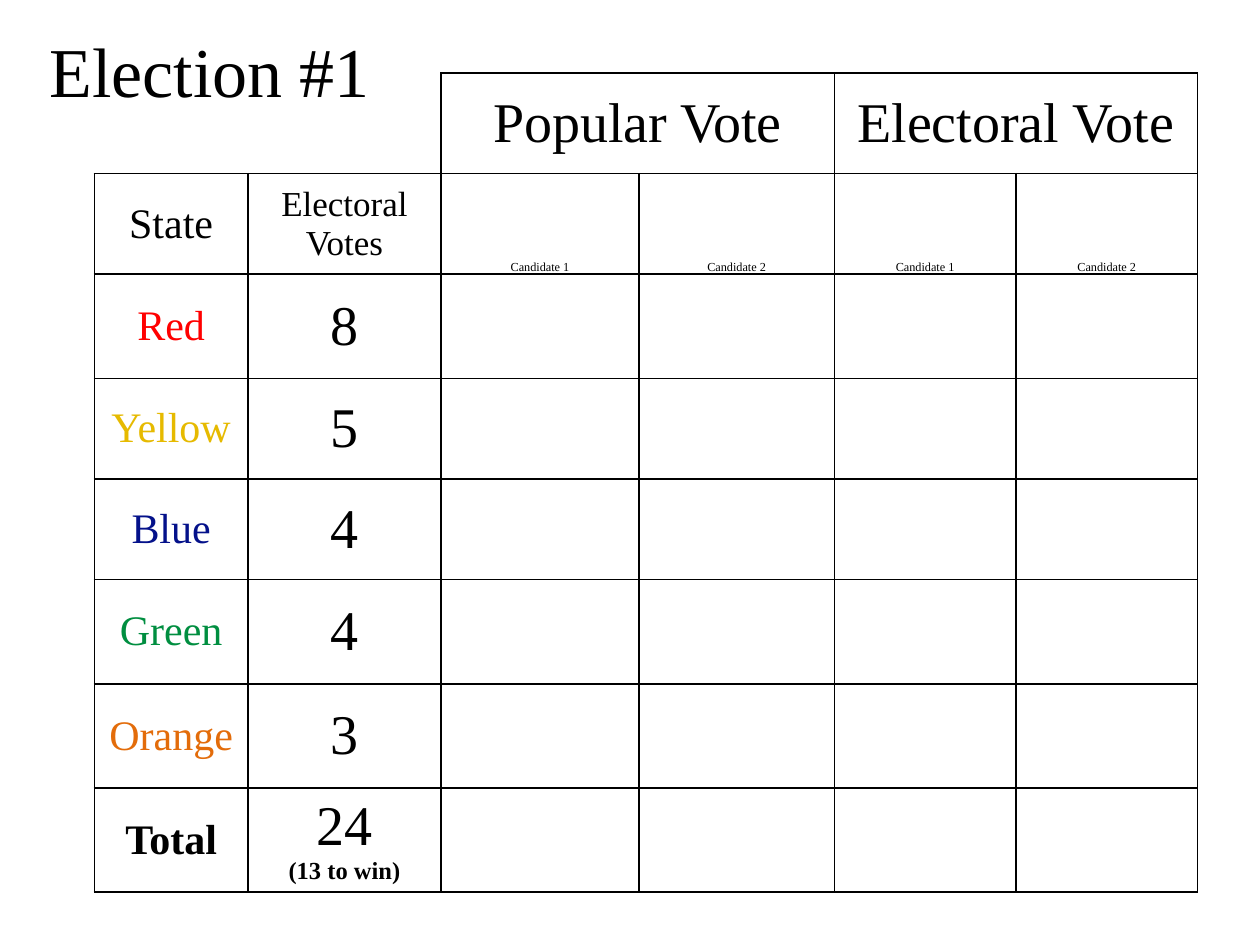
from typing import NamedTuple

from lxml.etree import SubElement
from pptx import Presentation
from pptx.dml.color import RGBColor
from pptx.enum.text import MSO_ANCHOR, MSO_AUTO_SIZE, PP_ALIGN
from pptx.oxml.ns import qn
from pptx.util import Cm, Pt

FONT = "Times New Roman"
BLACK = RGBColor(0x00, 0x00, 0x00)
RED = RGBColor(0xFF, 0x00, 0x00)
YELLOW = RGBColor(0xE6, 0xBA, 0x00)
BLUE = RGBColor(0x04, 0x11, 0x8A)
GREEN = RGBColor(0x00, 0x8E, 0x40)
ORANGE = RGBColor(0xE3, 0x6C, 0x0A)

COL_WIDTHS = [3.1, 3.89, 3.99, 3.94, 3.66, 3.66]
SHORT, TALL = 2.03, 2.1
ROW_HEIGHTS = [SHORT, SHORT, TALL, SHORT, SHORT, TALL, TALL, TALL]
VOTE_GROUPS = {2: "Popular Vote", 4: "Electoral Vote"}


class State(NamedTuple):
    name: str
    votes: int
    color: RGBColor


STATES = [
    State("Red", 8, RED),
    State("Yellow", 5, YELLOW),
    State("Blue", 4, BLUE),
    State("Green", 4, GREEN),
    State("Orange", 3, ORANGE),
]


def write(p, text: str, *, size: float, color: RGBColor = BLACK, bold: bool = False) -> None:
    p.alignment = PP_ALIGN.CENTER
    r = p.add_run()
    r.text = text
    r.font.name = FONT
    r.font.size = Pt(size)
    r.font.bold = bold
    r.font.color.rgb = color


def write_cell(cell, text: str, *, anchor=MSO_ANCHOR.MIDDLE, **fmt) -> None:
    cell.vertical_anchor = anchor
    write(cell.text_frame.paragraphs[0], text, **fmt)


def format_cell(cell, hidden: str = "") -> None:
    """Clear the fill and draw black borders, except on the hidden sides."""
    cell.margin_left = cell.margin_right = Cm(0.16)
    cell.margin_top = cell.margin_bottom = 0
    tc_pr = cell._tc.get_or_add_tcPr()
    for side in "LRTB":
        ln = SubElement(tc_pr, qn(f"a:ln{side}"), w=str(Pt(1)))
        if side in hidden:
            SubElement(ln, qn("a:noFill"))
        else:
            fill = SubElement(ln, qn("a:solidFill"))
            SubElement(fill, qn("a:srgbClr"), val=str(BLACK))
    cell.fill.background()


def add_title(s) -> None:
    title = s.shapes.title
    title.left, title.top, title.width, title.height = 0, Cm(0.43), Cm(8.46), Cm(1.96)
    tf = title.text_frame
    tf.auto_size = MSO_AUTO_SIZE.SHAPE_TO_FIT_TEXT
    tf.vertical_anchor = MSO_ANCHOR.TOP
    write(tf.paragraphs[0], "Election #1", size=40)


def add_vote_table(s) -> None:
    table = s.shapes.add_table(
        len(ROW_HEIGHTS), len(COL_WIDTHS), Cm(1.9), Cm(1.47),
        Cm(sum(COL_WIDTHS)), Cm(sum(ROW_HEIGHTS)),
    ).table
    table.first_row = table.horz_banding = False
    for col, width in zip(table.columns, COL_WIDTHS):
        col.width = Cm(width)
    for row, height in zip(table.rows, ROW_HEIGHTS):
        row.height = Cm(height)

    for i, row in enumerate(table.rows):
        for j, cell in enumerate(row.cells):
            format_cell(cell, hidden="LT" if i == 0 and j < 2 else "")
    for j in (0, *VOTE_GROUPS):
        table.cell(0, j).merge(table.cell(0, j + 1))

    write_cell(table.cell(1, 0), "State", size=24)
    write_cell(table.cell(1, 1), "Electoral Votes", size=20)
    for j, group in VOTE_GROUPS.items():
        write_cell(table.cell(0, j), group, size=32)
        for k in range(2):
            write_cell(table.cell(1, j + k), f"Candidate {k + 1}", size=7,
                       anchor=MSO_ANCHOR.BOTTOM)

    for i, state in enumerate(STATES, start=2):
        write_cell(table.cell(i, 0), state.name, size=24, color=state.color)
        write_cell(table.cell(i, 1), str(state.votes), size=32)

    last = len(ROW_HEIGHTS) - 1
    total = sum(state.votes for state in STATES)
    write_cell(table.cell(last, 0), "Total", size=24, bold=True)
    total_cell = table.cell(last, 1)
    write_cell(total_cell, str(total), size=32)
    write(total_cell.text_frame.add_paragraph(), f"({total // 2 + 1} to win)",
          size=14, bold=True)


def main() -> None:
    prs = Presentation()
    prs.slide_width, prs.slide_height = Cm(25.4), Cm(19.05)
    s = prs.slides.add_slide(prs.slide_layouts.get_by_name("Title Only"))
    add_title(s)
    add_vote_table(s)
    prs.save("out.pptx")


if __name__ == "__main__":
    main()
